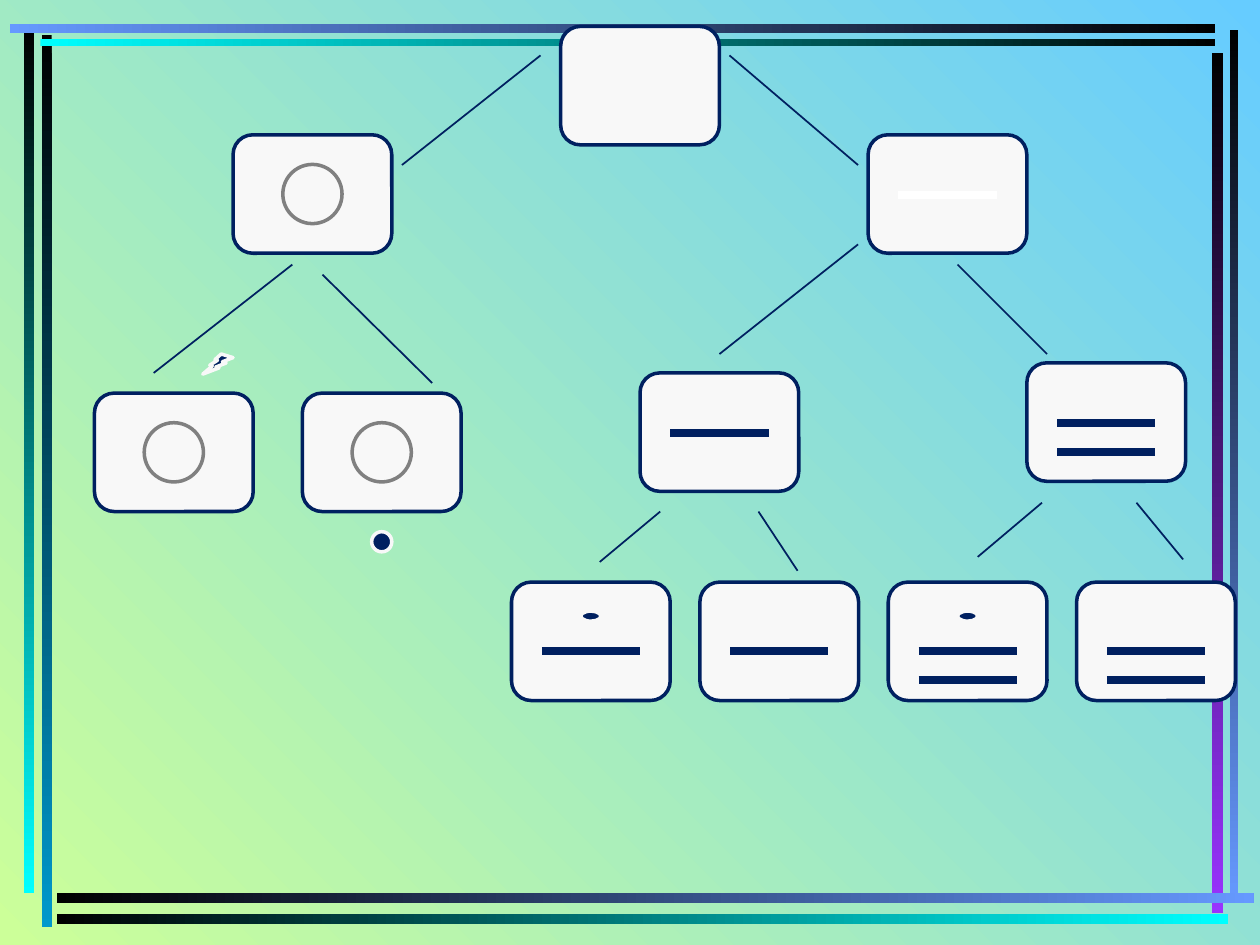
from lxml.etree import SubElement
from pptx import Presentation
from pptx.dml.color import RGBColor
from pptx.enum.shapes import MSO_CONNECTOR as Link, MSO_SHAPE as Kind
from pptx.oxml.ns import qn
from pptx.util import Inches, Pt

NAVY, PALE, GRAY, WHITE = "002060", "F8F8F8", "808080", "FFFFFF"
BLACK, BLUE, CYAN = "000000", "6699FF", "00FFFF"
BOX_W, BOX_H = 1.26, 0.94
BAR_X, BAR_W = 0.24, 0.78
RING = 0.47
LEAF_Y = 4.62


def tint(color, code):
    color.rgb = RGBColor.from_string(code)


def blend(fill, start, end, angle):
    """Two-stop gradient; the angle runs counter-clockwise."""
    fill.gradient()
    fill.gradient_angle = angle
    for stop, code in zip(fill.gradient_stops, (start, end)):
        tint(stop.color, code)


class Board:
    """Holds the slide and the line styles."""
    lines = {
        "edge": {"width": Pt(2)},
        "branch": {"width": Pt(1)},
        "bar": {"width": Pt(4.5)},
    }

    def __init__(self, slide):
        self.slide = slide

    def stroke(self, line, style, code):
        tint(line.color, code)
        for name, value in self.lines[style].items():
            setattr(line, name, value)

    def add(self, kind, x, y, w, h):
        shape = self.slide.shapes.add_shape(
            kind, Inches(x), Inches(y), Inches(w), Inches(h))
        shape.shadow.inherit = False
        return shape

    def strip(self, x, y, w, h, start, end):
        """Frame strip, shaded along its longer side."""
        shape = self.add(Kind.RECTANGLE, x, y, w, h)
        blend(shape.fill, start, end, 0 if w > h else 270)
        shape.line.fill.background()

    def mark(self, kind, x, y, w, h, fill=NAVY, edge=PALE):
        shape = self.add(kind, x, y, w, h)
        shape.fill.solid()
        tint(shape.fill.fore_color, fill)
        self.stroke(shape.line, "edge", edge)
        return shape

    def line(self, x1, y1, x2, y2, style="branch", code=NAVY):
        link = self.slide.shapes.add_connector(
            Link.STRAIGHT, Inches(x1), Inches(y1), Inches(x2), Inches(y2))
        SubElement(link.element.spPr, qn("a:effectLst"))
        self.stroke(link.line, style, code)

    def node(self, x, y, bars=(), code=NAVY, ring=False, dot=False):
        """Rounded box with bars at the given depths, a ring or a dot."""
        self.mark(Kind.ROUNDED_RECTANGLE, x, y, BOX_W, BOX_H, PALE, NAVY)
        for drop in bars:
            self.line(x + BAR_X, y + drop, x + BAR_X + BAR_W, y + drop,
                      "bar", code)
        if ring:
            self.mark(Kind.OVAL, x + (BOX_W - RING) / 2,
                      y + (BOX_H - RING) / 2, RING, RING, PALE, GRAY)
        if dot:
            self.mark(Kind.OVAL, x + 0.55, y + 0.23, 0.16, 0.08)


STRIPS = [
    (0.33, 0.28, 0.08, 7.08, BLACK, "0099CC"),
    (0.19, 0.25, 0.08, 6.84, BLACK, CYAN),
    (9.76, 0.24, 0.07, 6.93, BLACK, BLUE),
    (9.62, 0.42, 0.09, 6.83, BLACK, "9933FF"),
    (0.45, 7.09, 9.5, 0.08, BLACK, BLUE),
    (0.45, 7.25, 9.3, 0.08, BLACK, CYAN),
    (0.32, 0.31, 9.32, 0.06, CYAN, BLACK),
    (0.08, 0.19, 9.56, 0.07, BLUE, BLACK),
]
NODES = [
    (4.45, 0.21, {}),
    (2.4, 3.12, {"ring": True}),
    (0.75, 3.12, {"ring": True}),
    (6.89, 1.07, {"bars": [0.48], "code": WHITE}),
    (1.85, 1.07, {"ring": True}),
    (8.15, 2.88, {"bars": [0.48, 0.71]}),
    (5.08, 2.96, {"bars": [0.48]}),
]
LEAVES = [
    {"bars": [0.55], "dot": True},
    {"bars": [0.55]},
    {"bars": [0.55, 0.78], "dot": True},
    {"bars": [0.55, 0.78]},
]
BRANCHES = [
    (4.29, 0.44, 3.19, 1.31), (5.79, 0.44, 6.81, 1.31),
    (2.32, 2.1, 1.22, 2.96), (2.56, 2.18, 3.43, 3.04),
    (6.81, 1.94, 5.71, 2.81), (7.6, 2.1, 8.31, 2.81),
    (5.24, 4.06, 4.76, 4.46), (6.02, 4.06, 6.33, 4.53),
    (8.27, 3.99, 7.76, 4.42), (9.02, 3.99, 9.39, 4.44),
]


def main():
    deck = Presentation()
    deck.slide_width, deck.slide_height = Inches(10), Inches(7.5)
    slide = deck.slides.add_slide(deck.slide_layouts[6])
    blend(slide.background.fill, "CCFF99", "66CCFF", 45)

    board = Board(slide)
    for strip in STRIPS:
        board.strip(*strip)
    for x, y, parts in NODES:
        board.node(x, y, **parts)
    for i, parts in enumerate(LEAVES):
        board.node(4.06 + 1.495 * i, LEAF_Y, **parts)
    for branch in BRANCHES:
        board.line(*branch)

    board.mark(Kind.OVAL, 2.95, 4.22, 0.16, 0.16)
    bolt = board.mark(Kind.LIGHTNING_BOLT, 1.61, 2.81, 0.24, 0.16)
    bolt.element.spPr.xfrm.set("flipH", "1")
    deck.save("out.pptx")


if __name__ == "__main__":
    main()
